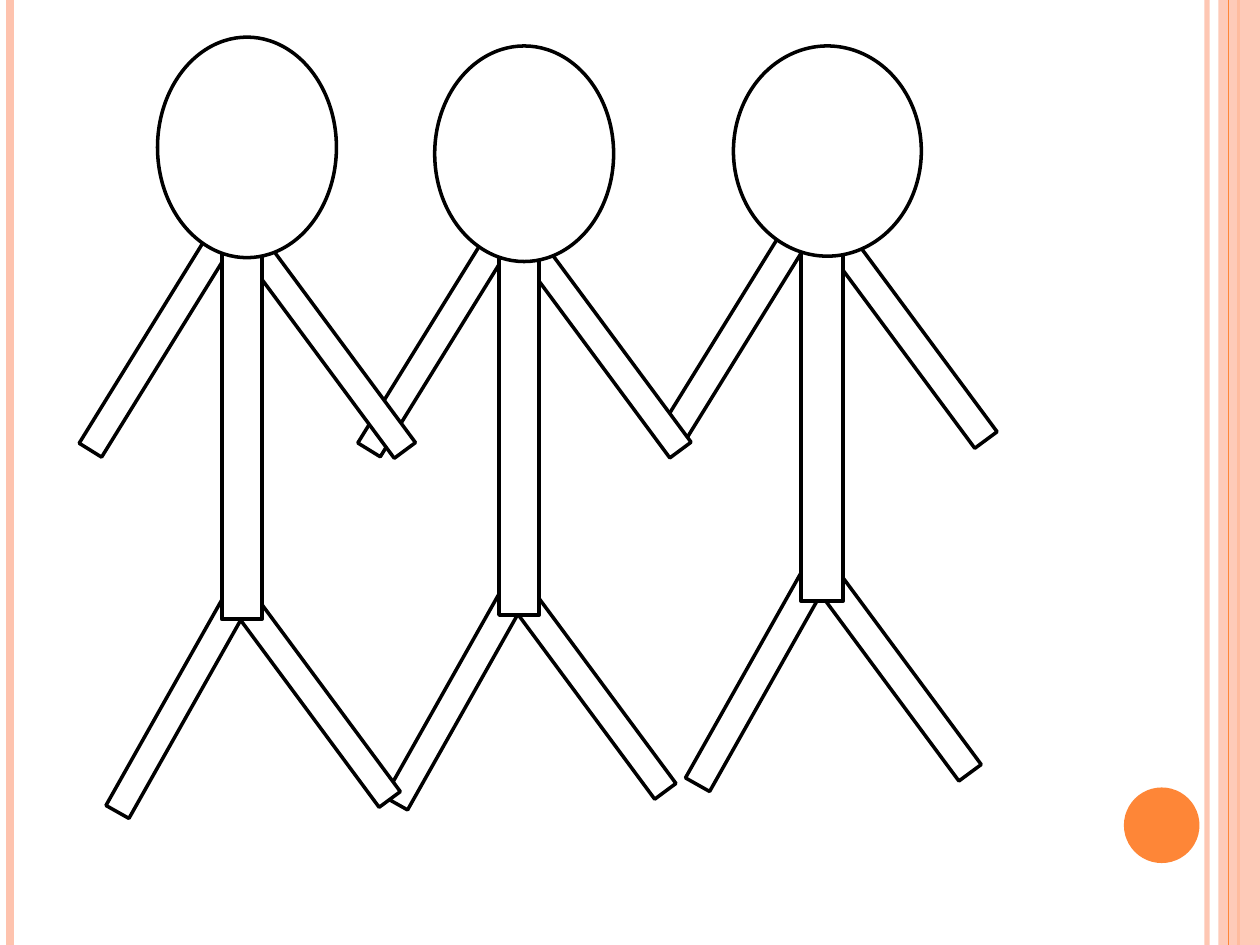
import pptx
import pptx.dml.color
import pptx.enum.shapes
import pptx.oxml
import pptx.oxml.ns
import pptx.util
from pptx.util import Inches

RGBColor = pptx.dml.color.RGBColor
WHITE = RGBColor(0xFF, 0xFF, 0xFF)
BLACK = RGBColor(0, 0, 0)
PEACH = RGBColor(0xFE, 0xC3, 0xAE)
ORANGE = RGBColor(0xFE, 0x86, 0x37)
KIND = pptx.enum.shapes.MSO_SHAPE

SPAN, TALL = 3.39, 5.37
LIMBS = [
    (2.38, 2.47, 53.5),
    (1.02, 2.42, 121.7),
    (2.26, 5.24, 53.5),
    (1.2, 5.27, 119.4),
]
TRUNK = (1.69, 3.14, 0.32, 2.97)
HEAD = (1.73, 0.88, 1.42, 1.75)
LIMB = (2.03, 0.21)
PEOPLE = [
    (4.75, 0.36, 3.56, 5.12),
    (2.43, 0.36, 3.39, 5.25),
    (0.23, 0.29, 3.39, 5.37),
]


def fade(part, share):
    """Make the colours of a part see-through, leaving a share in percent."""
    for tint in part._element.spPr.xpath(".//a:srgbClr"):
        alpha = pptx.oxml.parse_xml(
            f'<a:alpha {pptx.oxml.ns.nsdecls("a")} val="{share * 1000}"/>')
        tint.append(alpha)


def style(part, looks):
    """Set each named value on a part."""
    for name, value in looks.items():
        setattr(part, name, value)


def block(shapes, kind, box, fill, line=None, turn=0):
    """Add one filled shape in a box of inches."""
    shape = shapes.add_shape(kind, *map(Inches, box))
    shape.shadow.inherit = False
    shape.rotation = turn
    shape.fill.solid()
    shape.fill.fore_color.rgb = fill
    if line is None:
        shape.line.fill.background()
    else:
        style(shape.line, {"width": pptx.util.Pt(2)})
        shape.line.color.rgb = line
    return shape


def rule(shapes, x, box, tint, width):
    """Add an upright line at x, as tall as the box."""
    left, top, _, height = box
    ends = (left + x, top, left + x, top + height)
    line = shapes.add_connector(
        pptx.enum.shapes.MSO_CONNECTOR.STRAIGHT, *map(Inches, ends))
    style(line.line, {"width": pptx.util.Pt(width)})
    line.line.color.rgb = tint
    line._element.spPr.append(
        pptx.oxml.parse_xml(f'<a:effectLst {pptx.oxml.ns.nsdecls("a")}/>'))
    return line


def frame(shapes, box):
    """Draw the side stripes and the dot of the page."""
    left, top, width, height = box
    fade(rule(shapes, width - 0.42, box, PEACH, 3), 93)
    rule(shapes, 0.08, box, PEACH, 4.5)
    rule(shapes, width - 0.17, box, ORANGE, 1.5)
    band = (left + width - 0.33, top, 0.33, height)
    fade(block(shapes, KIND.RECTANGLE, band, PEACH), 87)
    rule(shapes, width - 0.25, box, ORANGE, 0.75)
    dot = (left + width - 1.08, top + height - 1.25, 0.6, 0.6)
    block(shapes, KIND.OVAL, dot, ORANGE)


def person(shapes, box):
    """Draw a stick person scaled to the box."""
    left, top, width, height = box
    wide, high = width / SPAN, height / TALL
    group = shapes.add_group_shape().shapes

    def place(kind, x, y, w, h, turn=0):
        """Add a part by its centre and scaled size."""
        spot = (left + x * wide - w / 2, top + y * high - h / 2, w, h)
        block(group, kind, spot, WHITE, BLACK, turn)

    for x, y, turn in LIMBS:
        place(KIND.RECTANGLE, x, y, LIMB[0] * high, LIMB[1] * wide, turn)
    for kind, (x, y, w, h) in ((KIND.RECTANGLE, TRUNK), (KIND.OVAL, HEAD)):
        place(kind, x, y, w * wide, h * high)


def main():
    """Build the slide and save it."""
    deck = pptx.Presentation()
    style(deck, {"slide_width": Inches(10), "slide_height": Inches(7.5)})
    slide = deck.slides.add_slide(deck.slide_layouts[6])
    frame(slide.shapes, (0, 0, 10, 7.5))
    for box in PEOPLE:
        person(slide.shapes, box)
    deck.save("out.pptx")


if __name__ == "__main__":
    main()
